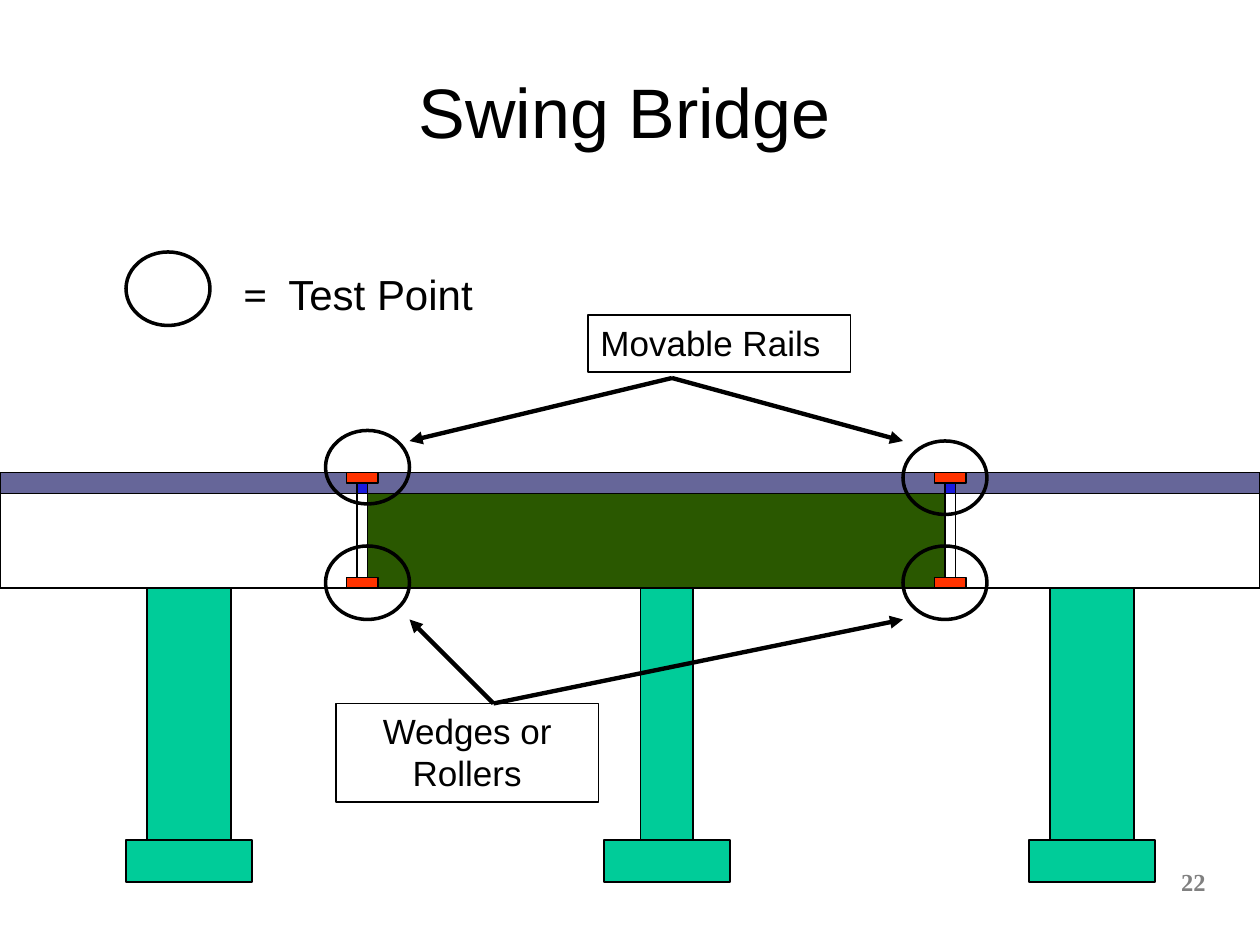
from dataclasses import dataclass

from lxml import etree
from pptx import Presentation
from pptx.dml.color import RGBColor
from pptx.enum import shapes, text
from pptx.oxml import ns
from pptx.util import Pt


@dataclass(frozen=True)
class Theme:
    ink: RGBColor = RGBColor(0, 0, 0)
    paper: RGBColor = RGBColor(255, 255, 255)
    pier: RGBColor = RGBColor(0x00, 0xCC, 0x99)
    span: RGBColor = RGBColor(0x2A, 0x58, 0x00)
    deck: RGBColor = RGBColor(0x66, 0x66, 0x99)
    joint: RGBColor = RGBColor(0x1A, 0x1A, 0xDE)
    support: RGBColor = RGBColor(0xFF, 0x33, 0x00)
    number: RGBColor = RGBColor(0x80, 0x80, 0x80)
    sans: str = "Arial"
    serif: str = "Times New Roman"
    title: int = 40
    legend: int = 24
    label: int = 20
    page: int = 14
    thin: float = 1
    ring: float = 2
    arrow: float = 2.5


THEME = Theme()
BLOCK = shapes.MSO_SHAPE.RECTANGLE


def style_font(font, size, color=THEME.ink, name=THEME.sans, bold=False):
    font.size, font.name, font.bold = Pt(size), name, bold
    font.color.rgb = color


def add_block(slide, left, top, width, height, fill=None, kind=BLOCK, line=THEME.thin):
    """Add an outlined shape, hollow when no fill is given."""
    shape = slide.shapes.add_shape(kind, Pt(left), Pt(top), Pt(width), Pt(height))
    shape.shadow.inherit = False
    if fill is None:
        shape.fill.background()
    else:
        shape.fill.solid()
        shape.fill.fore_color.rgb = fill
    shape.line.color.rgb = THEME.ink
    shape.line.width = Pt(line)
    return shape


def add_test_point(slide, left, top):
    add_block(slide, left, top, 48, 42, kind=shapes.MSO_SHAPE.OVAL, line=THEME.ring)


def add_pier(slide, center, width):
    add_block(slide, center - width / 2, 336, width, 144, THEME.pier)
    add_block(slide, center - 36, 480, 72, 24, THEME.pier)


def add_label(slide, wording, left, top, height, alignment):
    frame = add_block(slide, left, top, 150, height).text_frame
    frame.word_wrap = True
    frame.vertical_anchor = text.MSO_ANCHOR.TOP
    paragraph = frame.paragraphs[0]
    paragraph.text = wording
    paragraph.alignment = alignment
    style_font(paragraph.font, THEME.label)


def add_arrow(slide, start, end):
    arrow = slide.shapes.add_connector(
        shapes.MSO_CONNECTOR.STRAIGHT, *(Pt(value) for value in start + end))
    arrow.line.color.rgb = THEME.ink
    arrow.line.width = Pt(THEME.arrow)
    etree.SubElement(arrow.line._get_or_add_ln(), ns.qn("a:tailEnd"), type="triangle")
    etree.SubElement(arrow._element.spPr, ns.qn("a:effectLst"))


def add_text(slide, left, top, width, height):
    """Add an empty wrapping text box and return its first paragraph."""
    frame = slide.shapes.add_textbox(Pt(left), Pt(top), Pt(width), Pt(height)).text_frame
    frame.word_wrap = True
    return frame.paragraphs[0]


def add_title(slide, wording):
    title = slide.shapes.title
    title.left, title.top, title.width, title.height = Pt(48), Pt(36), Pt(618), Pt(54)
    title.text_frame.text = wording
    title.text_frame.vertical_anchor = text.MSO_ANCHOR.MIDDLE
    paragraph = title.text_frame.paragraphs[0]
    paragraph.alignment = text.PP_ALIGN.CENTER
    style_font(paragraph.font, THEME.title)


def add_legend(slide):
    add_test_point(slide, 72, 144)
    paragraph = add_text(slide, 132, 150, 210, 36)
    for wording, name, bold in (("=  ", THEME.serif, True), ("Test Point", THEME.sans, False)):
        run = paragraph.add_run()
        run.text = wording
        style_font(run.font, THEME.legend, name=name, bold=bold)


def add_bridge(slide):
    for center, width in ((108, 48), (381, 30), (624, 48)):
        add_pier(slide, center, width)
    for left, width, fill in ((210, 330, THEME.span), (546, 174, THEME.paper),
                              (0, 204, THEME.paper)):
        add_block(slide, left, 282, width, 54, fill)
    add_block(slide, 0, 270, 720, 12, THEME.deck)
    for joint in (204, 540):
        add_block(slide, joint, 270, 6, 12, THEME.joint)
        for top in (270, 330):
            add_block(slide, joint - 6, top, 18, 6, THEME.support)


def add_callouts(slide):
    for left, top in ((186, 246), (516, 252), (186, 312), (516, 312)):
        add_test_point(slide, left, top)
    add_label(slide, "Movable Rails", 336, 180, 32.4, text.PP_ALIGN.LEFT)
    add_label(slide, "Wedges or Rollers", 192, 402, 56.2, text.PP_ALIGN.CENTER)
    for start, target_y in (((384, 216), 252), ((282, 402), 354)):
        for target_x in (234, 516):
            add_arrow(slide, start, (target_x, target_y))


def add_page_number(slide, number):
    paragraph = add_text(slide, 546, 492, 150, 36)
    paragraph.text = number
    paragraph.alignment = text.PP_ALIGN.RIGHT
    style_font(paragraph.font, THEME.page, THEME.number, THEME.serif, bold=True)


def main():
    presentation = Presentation()
    presentation.slide_width, presentation.slide_height = Pt(720), Pt(540)
    slide = presentation.slides.add_slide(presentation.slide_layouts.get_by_name("Title Only"))
    add_title(slide, "Swing Bridge")
    add_legend(slide)
    add_bridge(slide)
    add_callouts(slide)
    add_page_number(slide, "22")
    presentation.save("out.pptx")


if __name__ == "__main__":
    main()
